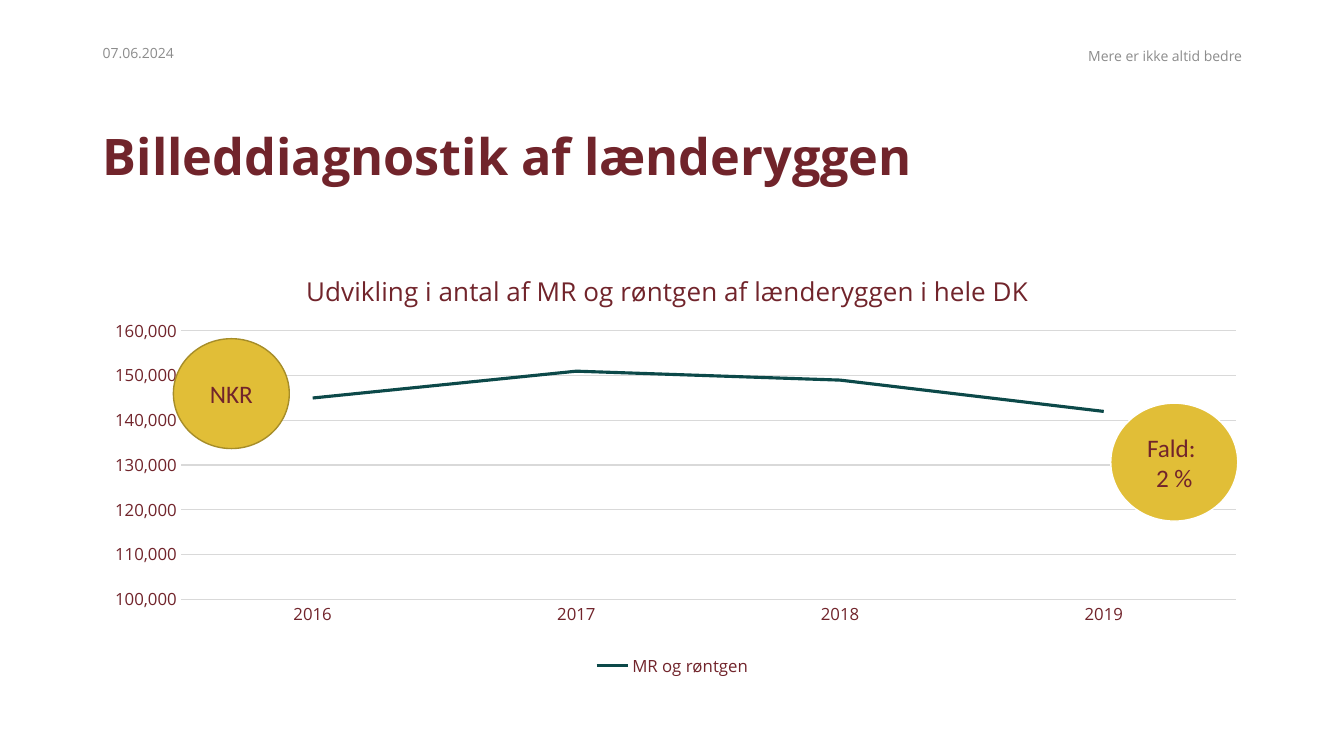
from lxml import etree
from pptx import Presentation
from pptx.chart.data import CategoryChartData
from pptx.dml.color import RGBColor
from pptx.enum.chart import XL_CHART_TYPE, XL_LEGEND_POSITION, XL_MARKER_STYLE, XL_TICK_MARK
from pptx.enum.shapes import MSO_SHAPE
from pptx.enum.text import MSO_ANCHOR, MSO_AUTO_SIZE, PP_ALIGN
from pptx.oxml.ns import qn
from pptx.util import Pt

LEFT, CENTER, RIGHT = PP_ALIGN.LEFT, PP_ALIGN.CENTER, PP_ALIGN.RIGHT
TOP, MIDDLE = MSO_ANCHOR.TOP, MSO_ANCHOR.MIDDLE
NO_TICK = XL_TICK_MARK.NONE

WINE = RGBColor(0x71, 0x24, 0x2B)
GREY = RGBColor(0x8C, 0x8C, 0x8C)
GRID = RGBColor(0xD9, 0xD9, 0xD9)
TEAL = RGBColor(0x0C, 0x49, 0x49)
GOLD = RGBColor(0xE1, 0xBE, 0x37)
DARK_GOLD = RGBColor(0xA6, 0x8D, 0x29)
WHITE = RGBColor(0xFF, 0xFF, 0xFF)
FONT, BADGE_FONT = "Open Sans", "Calibri"

MARGIN, WIDTH = 66.24, 828
TITLE = "Billeddiagnostik af lænderyggen"
HEADERS = [  # text, left, top, width, alignment
    ("07.06.2024", MARGIN, 23.76, 216, LEFT),
    ("Mere er ikke altid bedre", MARGIN + WIDTH - 324, 25.92, 324, RIGHT),
]
CHART_TITLE = "Udvikling i antal af MR og røntgen af lænderyggen i hele DK"
SERIES = "MR og røntgen"
EXAMS = {"2016": 145000, "2017": 151000, "2018": 149000, "2019": 142000}
BADGES = [  # lines, box, outline
    (["Fald: ", "2 %"], (793.44, 288, 90.72, 84.24), WHITE),
    (["NKR"], (123.84, 241.92, 82.8, 78.48), DARK_GOLD),
]


def style(font, size, color, name=FONT, bold=False):
    font.size, font.name, font.bold = Pt(size), name, bold
    font.color.rgb = color


def write(tf, lines, align, anchor, *font):
    tf.word_wrap = True
    tf.vertical_anchor = anchor
    for i, line in enumerate(lines):
        p = tf.paragraphs[0] if i == 0 else tf.add_paragraph()
        p.alignment = align
        r = p.add_run()
        r.text = line
        style(r.font, *font)
    return tf


def set_layout(parent, **values):
    """Place a chart part by fractions of the chart area."""
    layout = parent.find(qn("c:layout"))
    if layout is None:
        layout = etree.Element(qn("c:layout"))
        text = parent.find(qn("c:tx"))
        if text is None:
            parent.insert(0, layout)
        else:
            text.addnext(layout)
    manual = etree.SubElement(layout, qn("c:manualLayout"))
    for key, value in values.items():
        etree.SubElement(manual, qn("c:" + key)).set("val", str(value))


prs = Presentation()
prs.slide_width, prs.slide_height = Pt(960), Pt(540)
s = prs.slides.add_slide(prs.slide_layouts[5])

title = s.shapes.title
title.left, title.top, title.width, title.height = map(Pt, (MARGIN, 90.72, WIDTH, 83.52))
tf = write(title.text_frame, [TITLE], LEFT, TOP, 36, WINE, FONT, True)
tf.auto_size = MSO_AUTO_SIZE.NONE
tf.paragraphs[0].line_spacing = 0.9

for text, left, top, width, align in HEADERS:
    box = s.shapes.add_textbox(Pt(left), Pt(top), Pt(width), Pt(28.8))
    write(box.text_frame, [text], align, MIDDLE, 10, GREY)

data = CategoryChartData(number_format="#,##0")
data.categories = list(EXAMS)
data.add_series(SERIES, list(EXAMS.values()))
chart = s.shapes.add_chart(XL_CHART_TYPE.LINE, Pt(MARGIN), Pt(174.24), Pt(WIDTH), Pt(312.48), data).chart
style(chart.font, 12, WINE)

chart.has_title = True
r = chart.chart_title.text_frame.paragraphs[0].add_run()
r.text = CHART_TITLE
style(r.font, 18.6, WINE)
chart.chart_title.include_in_layout = False
set_layout(chart.chart_title._element, xMode="edge", yMode="edge", x=0.18, y=0.05)
set_layout(chart.plots[0]._element.getparent(), layoutTarget="inner", xMode="edge", yMode="edge",
           x=0.076, y=0.199, w=0.91, h=0.613)

chart.has_legend = True
chart.legend.position = XL_LEGEND_POSITION.BOTTOM
chart.legend.include_in_layout = False
style(chart.legend.font, 12, WINE)

years, counts = chart.category_axis, chart.value_axis
for axis in (years, counts):
    axis.major_tick_mark = axis.minor_tick_mark = NO_TICK
    style(axis.tick_labels.font, 12, WINE)
counts.minimum_scale, counts.maximum_scale, counts.major_unit = 100000, 160000, 10000
counts.tick_labels.number_format = "#,##0"
counts.tick_labels.number_format_is_linked = False
counts.format.line.fill.background()
for line in (years.format.line, counts.major_gridlines.format.line):
    line.color.rgb, line.width = GRID, Pt(0.75)

plot = chart.plots[0]
plot.vary_by_categories = False
exams = plot.series[0]
exams.smooth = False
exams.marker.style = XL_MARKER_STYLE.NONE
exams.format.line.color.rgb, exams.format.line.width = TEAL, Pt(2.25)

for lines, box, outline in BADGES:
    sp = s.shapes.add_shape(MSO_SHAPE.OVAL, *map(Pt, box))
    sp.shadow.inherit = False
    sp.fill.solid()
    sp.fill.fore_color.rgb = GOLD
    sp.line.color.rgb, sp.line.width = outline, Pt(1)
    write(sp.text_frame, lines, CENTER, MIDDLE, 18, WINE, BADGE_FONT)

prs.save("out.pptx")
